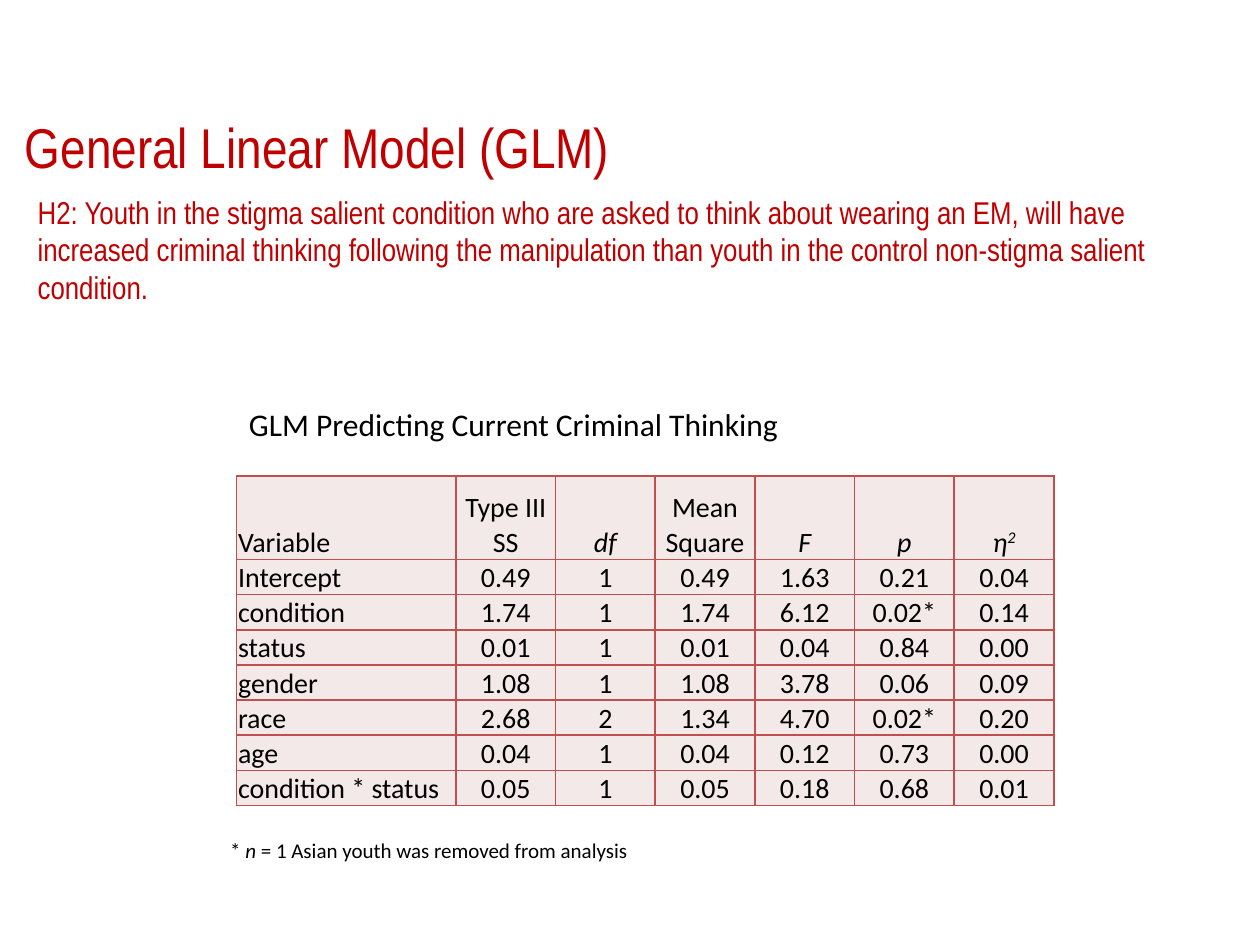
from lxml import etree
from pptx import Presentation
from pptx import util as u
from pptx.dml.color import RGBColor
from pptx.enum import text
from pptx.oxml.ns import qn

RED = RGBColor(0xC0, 0x00, 0x00)
BLACK = RGBColor(0x00, 0x00, 0x00)
CELL_FILL = RGBColor(0xF4, 0xE9, 0xE9)
BORDER = RGBColor(0xC0, 0x50, 0x4D)

TITLE = dict(name="Arial Narrow", size=u.Pt(32))
HYPOTHESIS = dict(name="Arial Narrow", size=u.Pt(18))
CAPTION = dict(name="Calibri", size=u.Pt(18))
BODY = dict(name="Calibri", size=u.Pt(16))
NOTE = dict(name="Calibri", size=u.Pt(12))
ITALIC = dict(italic=True)
CELL = dict(margin_left=u.Cm(0.03), margin_right=u.Cm(0.03),
            margin_top=u.Cm(0.03), margin_bottom=0,
            vertical_anchor=text.MSO_ANCHOR.BOTTOM)

HEADERS = ["Variable", "Type III SS", "df", "Mean Square", "F", "p", "η"]
ITALIC_HEADERS = {"df", "F", "p", "η"}
ROWS = [
    ["Intercept", "0.49", "1", "0.49", "1.63", "0.21", "0.04"],
    ["condition", "1.74", "1", "1.74", "6.12", "0.02*", "0.14"],
    ["status", "0.01", "1", "0.01", "0.04", "0.84", "0.00"],
    ["gender", "1.08", "1", "1.08", "3.78", "0.06", "0.09"],
    ["race", "2.68", "2", "1.34", "4.70", "0.02*", "0.20"],
    ["age", "0.04", "1", "0.04", "0.12", "0.73", "0.00"],
    ["condition * status", "0.05", "1", "0.05", "0.18", "0.68", "0.01"],
]


def set_attrs(obj, values):
    for name, value in values.items():
        setattr(obj, name, value)


def add_run(p, words, fmt, color):
    r = p.add_run()
    r.text = words
    set_attrs(r.font, fmt)
    r.font.color.rgb = color
    return r


def add_text(s, box, runs, color, anchor=text.MSO_ANCHOR.TOP):
    sp = s.shapes.add_textbox(*(u.Cm(v) for v in box))
    tf = sp.text_frame
    set_attrs(tf, dict(word_wrap=True, vertical_anchor=anchor))
    p = tf.paragraphs[0]
    for words, fmt in runs:
        add_run(p, words, fmt, color)
    return p


def set_borders(cell):
    tc_pr = cell._tc.get_or_add_tcPr()
    for i, side in enumerate(("lnL", "lnR", "lnT", "lnB")):
        ln = etree.Element(qn(f"a:{side}"), w=str(u.Pt(1)))
        fill = etree.SubElement(ln, qn("a:solidFill"))
        etree.SubElement(fill, qn("a:srgbClr"), val=str(BORDER))
        tc_pr.insert(i, ln)


def fill_cell(cell, words, fmt, centred):
    set_attrs(cell, CELL)
    cell.fill.solid()
    cell.fill.fore_color.rgb = CELL_FILL
    set_borders(cell)
    p = cell.text_frame.paragraphs[0]
    if centred:
        p.alignment = text.PP_ALIGN.CENTER
    add_run(p, words, fmt, BLACK)
    return p


def add_glm_table(s):
    grid = [HEADERS] + ROWS
    frame = s.shapes.add_table(len(grid), len(HEADERS), u.Cm(4.77),
                               u.Cm(9.6), u.Cm(16.5), u.Cm(6.6))
    table = frame.table
    for j, col in enumerate(table.columns):
        col.width = u.Cm(2.01 if j else 4.42)
    for i, row in enumerate(table.rows):
        row.height = u.Cm(0.64 if i else 1.68)
        for j, words in enumerate(grid[i]):
            italic = i == 0 and words in ITALIC_HEADERS
            fmt = BODY | ITALIC if italic else BODY
            p = fill_cell(table.cell(i, j), words, fmt, j > 0)
            if words == "η":
                r = add_run(p, "2", fmt, BLACK)
                r.font._element.set("baseline", "30000")


def main():
    prs = Presentation()
    prs.slide_width, prs.slide_height = u.Cm(25.4), u.Cm(19.05)
    s = prs.slides.add_slide(prs.slide_layouts[6])
    title = add_text(s, (0, 1.75, 20.75, 2.39),
                     [("General Linear Model (GLM)", TITLE)], RED,
                     text.MSO_ANCHOR.MIDDLE)
    title._p.get_or_add_pPr().set("marL", str(u.Cm(0.25)))
    add_text(s, (0.51, 3.76, 23.8, 3.33), [(
        "H2: Youth in the stigma salient condition who are asked to think "
        "about wearing an EM, will have increased criminal thinking "
        "following the manipulation than youth in the control non-stigma "
        "salient condition.", HYPOTHESIS)], RED)
    add_glm_table(s)
    add_text(s, (4.39, 16.76, 14.83, 0.76), [
        ("* ", NOTE), ("n ", NOTE | ITALIC),
        ("= 1 Asian youth was removed from analysis", NOTE)], BLACK)
    add_text(s, (4.77, 8.05, 16.5, 1.02),
             [("GLM Predicting Current Criminal Thinking", CAPTION)], BLACK)
    prs.save("out.pptx")


if __name__ == "__main__":
    main()
